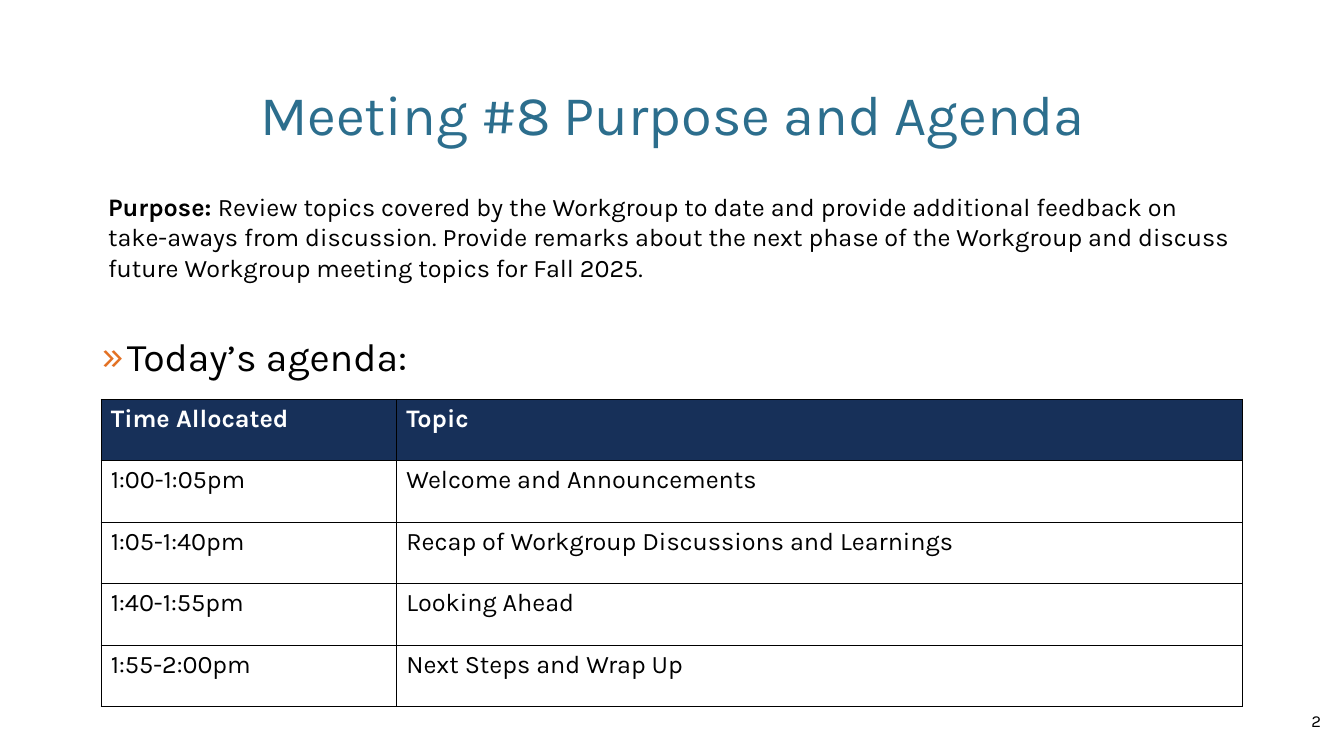
from lxml.etree import SubElement
from pptx import Presentation
from pptx.dml.color import RGBColor
from pptx.enum.shapes import MSO_SHAPE
from pptx.enum.text import MSO_ANCHOR, PP_ALIGN
from pptx.oxml.ns import qn
from pptx.util import Emu, Pt

BLACK = RGBColor(0x00, 0x00, 0x00)
WHITE = RGBColor(0xFF, 0xFF, 0xFF)
TEAL = RGBColor(0x2C, 0x6E, 0x8D)
NAVY = RGBColor(0x17, 0x30, 0x59)
ORANGE = RGBColor(0xE3, 0x71, 0x24)

PURPOSE = (
    "Review topics covered by the Workgroup to date and provide additional feedback on "
    "take-aways from discussion. Provide remarks about the next phase of the Workgroup "
    "and discuss future Workgroup meeting topics for Fall 2025."
)
AGENDA = [
    ("Time Allocated", "Topic"),
    ("1:00-1:05pm", "Welcome and Announcements"),
    ("1:05-1:40pm", "Recap of Workgroup Discussions and Learnings"),
    ("1:40-1:55pm", "Looking Ahead"),
    ("1:55-2:00pm", "Next Steps and Wrap Up"),
]


def px(length):
    """Turn px, at 100 to the inch, into EMU."""
    return Emu(length * 9144)


class SlideWriter:
    """Draws elements on one slide in one style."""

    font_name = "Karla"

    def __init__(self, slide):
        """Keep the slide to draw on."""
        self.slide = slide

    def style(self, span, size, color, bold=False):
        """Format one run."""
        span.font.name = self.font_name
        span.font.size = Pt(size)
        span.font.bold = bold
        span.font.color.rgb = color

    def text(self, left, top, width, height, words, size, color,
             align=PP_ALIGN.LEFT, anchor=MSO_ANCHOR.MIDDLE):
        """Add a wrapped text box and return its paragraph."""
        box = self.slide.shapes.add_textbox(px(left), px(top), px(width), px(height))
        frame = box.text_frame
        frame.word_wrap = True
        frame.vertical_anchor = anchor
        para = frame.paragraphs[0]
        para.text = words
        para.alignment = align
        self.style(para.runs[0], size, color)
        return para

    def bullet(self, para, mark, color, indent):
        """Give a paragraph a coloured hanging bullet."""
        properties = para._p.get_or_add_pPr()
        properties.set("marL", str(px(indent)))
        properties.set("indent", str(px(-indent)))
        bullet_color = SubElement(properties, qn("a:buClr"))
        SubElement(bullet_color, qn("a:srgbClr"), val=str(color))
        SubElement(properties, qn("a:buFont"), typeface=self.font_name)
        SubElement(properties, qn("a:buChar"), char=mark)
        para.space_after = Pt(6)

    def panel(self, left, top, width, height, label, words, size):
        """Add a rounded white panel with a bold label before its words."""
        box = self.slide.shapes.add_shape(
            MSO_SHAPE.ROUNDED_RECTANGLE, px(left), px(top), px(width), px(height))
        box.shadow.inherit = False
        box.fill.solid()
        box.fill.fore_color.rgb = WHITE
        box.line.color.rgb = WHITE
        box.line.width = Pt(0.5)
        box.text_frame.word_wrap = True
        box.text_frame.vertical_anchor = MSO_ANCHOR.MIDDLE
        para = box.text_frame.paragraphs[0]
        para.alignment = PP_ALIGN.LEFT
        for content, bold in ((label, True), (words, False)):
            span = para.add_run()
            span.text = content
            self.style(span, size, BLACK, bold)

    def border(self, cell, color, width):
        """Draw all four sides of a cell."""
        properties = cell._tc.get_or_add_tcPr()
        for position, side in enumerate(("a:lnL", "a:lnR", "a:lnT", "a:lnB")):
            line = SubElement(properties, qn(side), w=str(Pt(width)))
            fill = SubElement(line, qn("a:solidFill"))
            SubElement(fill, qn("a:srgbClr"), val=str(color))
            properties.insert(position, line)

    def table(self, left, top, widths, row_height, rows, size):
        """Add a bordered table with a dark header row."""
        table = self.slide.shapes.add_table(
            len(rows), len(widths), px(left), px(top),
            px(sum(widths)), px(row_height * len(rows))).table
        for column, width in zip(table.columns, widths):
            column.width = px(width)
        for row_index, row in enumerate(rows):
            table.rows[row_index].height = px(row_height)
            header = row_index == 0
            for column_index, words in enumerate(row):
                cell = table.cell(row_index, column_index)
                cell.fill.solid()
                cell.fill.fore_color.rgb = NAVY if header else WHITE
                para = cell.text_frame.paragraphs[0]
                para.text = words
                self.style(para.runs[0], size, WHITE if header else BLACK, header)
                self.border(cell, BLACK, 0.5)


def main():
    """Build the agenda slide."""
    deck = Presentation()
    deck.slide_width = px(1333)
    deck.slide_height = px(750)
    page = SlideWriter(deck.slides.add_slide(deck.slide_layouts[6]))
    page.text(92, 40, 1150, 145, "Meeting #8 Purpose and Agenda", 40, TEAL, PP_ALIGN.CENTER)
    page.panel(92, 180, 1150, 110, "Purpose: ", PURPOSE, 18)
    heading = page.text(91, 325, 1150, 340, "Today’s agenda:", 28, BLACK, anchor=MSO_ANCHOR.TOP)
    page.bullet(heading, "»", ORANGE, 25)
    page.table(100, 396, (293, 839), 61, AGENDA, 18)
    page.text(1020, 695, 300, 40, "2", 12, BLACK, PP_ALIGN.RIGHT)
    deck.save("out.pptx")


if __name__ == "__main__":
    main()
